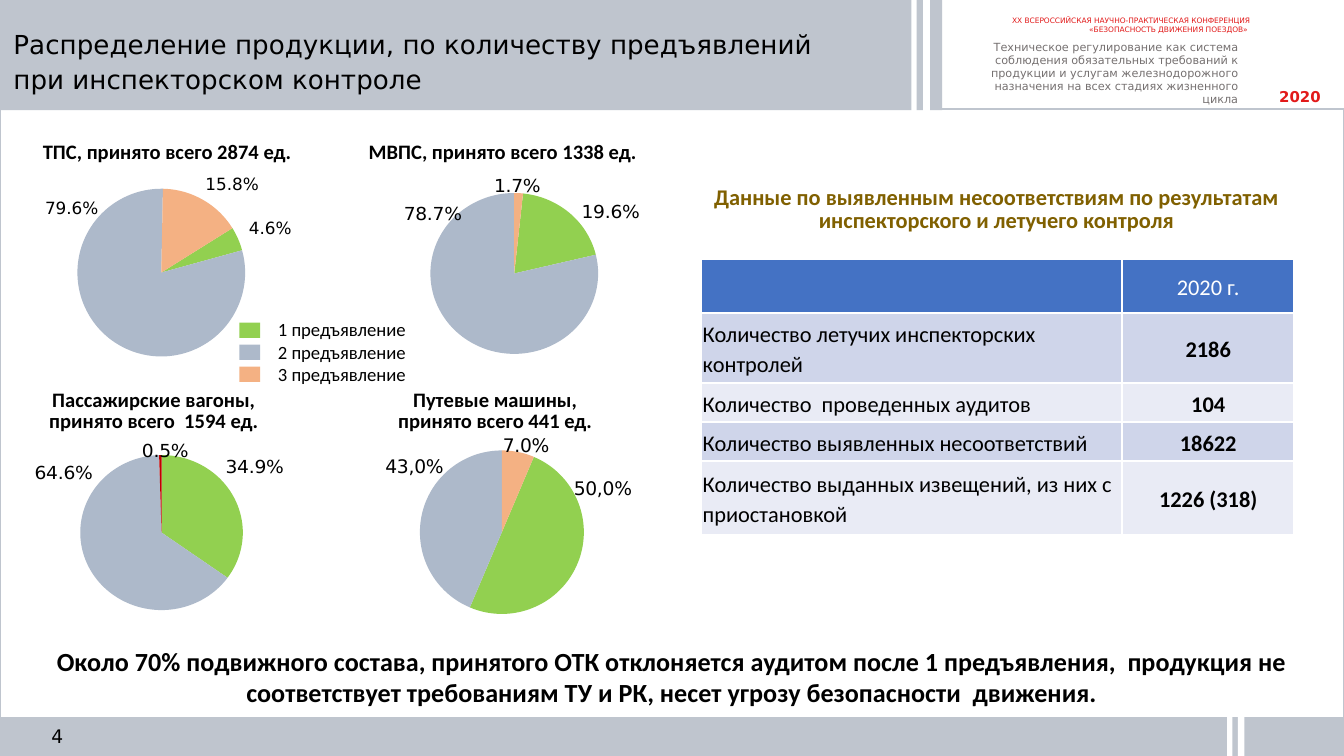
from math import cos, pi, sin

from lxml.etree import SubElement
from pptx import Presentation
from pptx.chart.data import CategoryChartData
from pptx.dml.color import RGBColor
from pptx.enum.chart import XL_CHART_TYPE
from pptx.enum.shapes import MSO_SHAPE
from pptx.enum.text import MSO_ANCHOR, PP_ALIGN
from pptx.oxml import parse_xml
from pptx.oxml.ns import nsdecls, qn
from pptx.util import Pt

GREY, WHITE, BLACK, RED = "BFC5CE", "FFFFFF", "000000", "E21A1A"
GREEN, BLUE_GREY, ORANGE, DARK_RED = "92D050", "ADB9CA", "F4B183", "C00000"
SANS, CALIBRI = "DejaVu Sans", "Calibri"
LEFT, CENTER, RIGHT = PP_ALIGN.LEFT, PP_ALIGN.CENTER, PP_ALIGN.RIGHT

TITLE = ["Распределение продукции, по количеству предъявлений", "при инспекторском контроле"]
BARS = [  # box, colour
    ((0, 0, 504.7, 59), GREY), ((0, 384.2, 720, 20.8), GREY),
    ((494.6, 0, 3.6, 59.5), WHITE), ((488.2, 0, 2.9, 59.5), WHITE),
    ((663.1, 382, 3.6, 23), WHITE), ((657.4, 382, 2.9, 23), WHITE),
]
BOLD_11 = dict(size=11, bold=True, align=CENTER, spacing=11, wrap=False)
TEXTS = [  # box, lines, format
    ((678.2, 43.2, 49.7, 17.3), ["2020"], dict(font=SANS, size=8, bold=True, color=RED)),
    ((505.4, 5, 171.4, 17.3),
     ["XX ВСЕРОССИЙСКАЯ НАУЧНО-ПРАКТИЧЕСКАЯ КОНФЕРЕНЦИЯ «БЕЗОПАСНОСТЬ ДВИЖЕНИЯ ПОЕЗДОВ» "],
     dict(font=SANS, size=4, color=RED, align=RIGHT)),
    ((511.2, 18, 159.1, 42.5),
     ["Техническое регулирование как система соблюдения обязательных требований к продукции "
      "и услугам железнодорожного назначения на всех стадиях жизненного цикла"],
     dict(font=SANS, size=6, color="767171", align=RIGHT, spacing=7)),
    ((15.1, 73.4, 149, 18.7), ["ТПС, принято всего 2874 ед."], BOLD_11),
    ((189.4, 73.4, 159.8, 18.7), ["МВПС, принято всего 1338 ед."], BOLD_11),
    ((15.8, 206, 133.2, 29.5), ["Пассажирские вагоны,", "принято всего  1594 ед."], BOLD_11),
    ((203, 206, 124.6, 29.5), ["Путевые машины,", "принято всего 441 ед."], BOLD_11),
    ((0, 342, 720, 41),
     ["Около 70% подвижного состава, принятого ОТК отклоняется аудитом после 1 предъявления,  "
      "продукция не соответствует требованиям ТУ и РК, несет угрозу безопасности  движения."],
     dict(size=14, bold=True, align=CENTER)),
    ((369.4, 97.2, 329, 31.7),
     ["Данные по выявленным несоответствиям по результатам инспекторского и летучего контроля"],
     dict(size=12, bold=True, color="806000", align=CENTER, spacing=12)),
]
# label_centers are slide positions of the value labels
PIES = [
    dict(box=(5, 88.6, 187.2, 113.8), plot=(0.11, 0.87, 0.79), start=58, size=9,
         values=[0.046, 0.796, 0.158], label_centers=[(144, 123), (39, 111), (124, 100)]),
    dict(box=(203, 88.6, 157.7, 105.8), plot=(0.11, 0.92, 0.85), start=6, size=10,
         values=[0.196, 0.787, 0.017], label_centers=[(327, 111.5), (232, 111.5), (277, 97.5)]),
    dict(box=(185, 226.8, 167.8, 102.2), plot=(0.14, 1, 0.86), start=23, size=10,
         values=[0.55, 0.48, 0.07], label_centers=[(322.5, 262), (222.5, 250), (282, 239.5)],
         custom={0: "50,0%", 1: "43,0%"}),
    dict(box=(10.1, 229, 157.7, 97.9), plot=(0.11, 0.97, 0.89), start=0, size=10,
         values=[0.349, 0.646, 0.0048], label_centers=[(136, 247), (34.5, 250), (88.5, 238.5)],
         last_color=DARK_RED),
]
LEGEND = [("1 предъявление", GREEN), ("2 предъявление", BLUE_GREY), ("3 предъявление", ORANGE)]
TABLE = [
    ("", "2020 г."),
    ("Количество летучих инспекторских контролей", "2186"),
    ("Количество  проведенных аудитов", "104"),
    ("Количество выявленных несоответствий", "18622"),
    ("Количество выданных извещений, из них с приостановкой", "1226 (318)"),
]
COLUMN_WIDTHS, ROW_HEIGHTS = (225.4, 92.2), (28.8, 37.4, 20.9, 20.9, 39.6)
HEADER_FILL, BAND_FILLS = "4472C4", ("E9EBF5", "CFD5EA")


def rgb(color):
    return RGBColor.from_string(color)


def points(box):
    return [Pt(length) for length in box]


def write(frame, lines, font=CALIBRI, size=10, bold=False, color=BLACK,
          align=LEFT, spacing=None, wrap=True):
    frame.word_wrap = wrap
    for index, line in enumerate(lines):
        paragraph = frame.add_paragraph() if index else frame.paragraphs[0]
        paragraph.alignment = align
        if spacing:
            paragraph.line_spacing = Pt(spacing)
        run = paragraph.add_run()
        run.text = line
        for name, value in dict(name=font, size=Pt(size), bold=bold).items():
            setattr(run.font, name, value)
        run.font.color.rgb = rgb(color)


def add_text(shapes, box, lines, style):
    frame = shapes.add_textbox(*points(box)).text_frame
    write(frame, lines, **style)
    return frame


def add_bar(shapes, box, color):
    bar = shapes.add_shape(MSO_SHAPE.RECTANGLE, *points(box))
    bar.shadow.inherit = False
    bar.fill.solid()
    bar.fill.fore_color.rgb = rgb(color)
    bar.line.fill.background()
    return bar


def manual_layout(**settings):
    layout = parse_xml(f"<c:layout {nsdecls('c')}><c:manualLayout/></c:layout>")
    for name, value in settings.items():
        SubElement(layout[0], qn(f"c:{name}")).set("val", str(value))
    return layout


def outward(component):
    """Side to which a label hangs off the rim: -1, 0 (within 5 degrees of an axis) or 1."""
    return 0 if abs(component) < sin(5 * pi / 180) else component / abs(component)


def add_pie(shapes, box, plot, start, size, values, label_centers, custom={}, last_color=ORANGE):
    left, top, width, height = box
    plot_top, plot_width, plot_height = plot
    data = CategoryChartData(number_format="0.0%")
    data.categories = ["1", "2", "3"]
    data.add_series("Series 1", values)
    chart = shapes.add_chart(XL_CHART_TYPE.PIE, *points(box), data).chart
    chart.has_legend = chart.has_title = False
    chart.font.name, chart.font.size = SANS, Pt(size)
    chart.font.color.rgb = rgb(BLACK)
    pie = chart.plots[0]
    pie.vary_by_categories = True
    series = pie.series[0]
    labels = series.data_labels
    for name, value in dict(show_value=True, number_format="0.0%",
                            number_format_is_linked=False).items():
        setattr(labels, name, value)
    labels.font.size = Pt(size)
    for index, color in enumerate((GREEN, BLUE_GREY, last_color)):
        point = series.points[index]
        point.format.fill.solid()
        point.format.fill.fore_color.rgb = rgb(color)
        if index in custom:
            write(point.data_label.text_frame, [custom[index]], SANS, size, align=CENTER)
        else:
            point.data_label.font.size = Pt(size)

    root = chart.element
    area = root.find(".//" + qn("c:plotArea"))
    for old in area.findall(qn("c:layout")):
        area.remove(old)
    area.insert(0, manual_layout(layoutTarget="inner", xMode="edge", yMode="edge",
                                 x=0, y=plot_top, w=plot_width, h=plot_height))
    pie_node = area.find(qn("c:pieChart"))
    for old in pie_node.findall(qn("c:firstSliceAng")):
        pie_node.remove(old)
    SubElement(pie_node, qn("c:firstSliceAng")).set("val", str(start))
    for leader in root.iter(qn("c:showLeaderLines")):
        leader.set("val", "0")

    # Label offsets count from the default place just outside the rim
    center_x = left + width * plot_width / 2
    center_y = top + height * (plot_top + plot_height / 2)
    rim = min(width * plot_width, height * plot_height) / 2 + 3.2
    angle = start * pi / 180
    for label, value, (x, y) in zip(root.iter(qn("c:dLbl")), values, label_centers):
        sweep = 2 * pi * value / sum(values)
        across, down = sin(angle + sweep / 2), -cos(angle + sweep / 2)
        angle += sweep
        half_width = size * (0.64 * len(f"{value:.1%}")) / 2
        default_x = center_x + rim * across + half_width * outward(across)
        default_y = center_y + rim * down + 0.58 * size * (outward(down) or 0)
        for old in label.findall(qn("c:layout")):
            label.remove(old)
        label.insert(1, manual_layout(x=round((x - default_x) / width, 4),
                                      y=round((y - default_y) / height, 4)))


def add_legend(shapes):
    legend = shapes.add_group_shape().shapes
    for index, (name, color) in enumerate(LEGEND):
        offset = index * 11.8
        add_bar(legend, (128.2, 172.8 + offset, 11.2, 8.2), color)
        add_text(legend, (141.8, 167 + offset, 102.2, 19.4), [name], dict(size=10))


def add_results(shapes):
    box = (375.8, 139, sum(COLUMN_WIDTHS), sum(ROW_HEIGHTS))
    table = shapes.add_table(len(TABLE), 2, *points(box)).table
    for column, width in zip(table.columns, COLUMN_WIDTHS):
        column.width = Pt(width)
    for row, (height, texts) in enumerate(zip(ROW_HEIGHTS, TABLE)):
        table.rows[row].height = Pt(height)
        for column, text in enumerate(texts):
            cell = table.cell(row, column)
            cell.vertical_anchor = MSO_ANCHOR.MIDDLE
            if row:
                for side in ("left", "top", "right"):
                    setattr(cell, f"margin_{side}", Pt(0.7))
                cell.margin_bottom = 0
            if text:
                write(cell.text_frame, [text], size=12, bold=bool(row and column),
                      color=BLACK if row else WHITE,
                      align=CENTER if column else LEFT, spacing=16)
            cell.fill.solid()
            cell.fill.fore_color.rgb = rgb(BAND_FILLS[row % 2] if row else HEADER_FILL)
            properties = cell._tc.get_or_add_tcPr()
            for index, side in enumerate("LRTB"):
                properties.insert(index, parse_xml(
                    f'<a:ln{side} {nsdecls("a")} w="12700"><a:solidFill>'
                    f'<a:srgbClr val="{WHITE}"/></a:solidFill></a:ln{side}>'))


def main():
    presentation = Presentation()
    presentation.slide_width, presentation.slide_height = Pt(720), Pt(405)
    slide = presentation.slides.add_slide(presentation.slide_layouts[5])
    shapes = slide.shapes

    border = add_bar(shapes, (0, 58.5, 720, 345.6), WHITE)
    border.fill.background()
    border.line.color.rgb = rgb(GREY)
    border.line.width = Pt(1)
    for box, color in BARS:
        add_bar(shapes, box, color)

    title = shapes.title
    title.element.getparent().append(title.element)  # in front of the header bar
    title.left, title.top, title.width, title.height = points((0, 9.5, 720, 45))
    title.text_frame.vertical_anchor = MSO_ANCHOR.TOP
    write(title.text_frame, TITLE, SANS, 14, spacing=18.8)

    number = add_text(shapes, (15.8, 388, 18, 12.2), ["4"], dict(font=SANS, align=RIGHT))
    for side in ("left", "top", "right", "bottom"):
        setattr(number, f"margin_{side}", 0)
    number.vertical_anchor = MSO_ANCHOR.MIDDLE

    for pie in PIES:
        add_pie(shapes, **pie)
    for box, lines, style in TEXTS:
        add_text(shapes, box, lines, style)
    add_legend(shapes)
    add_results(shapes)
    presentation.save("out.pptx")


if __name__ == "__main__":
    main()
